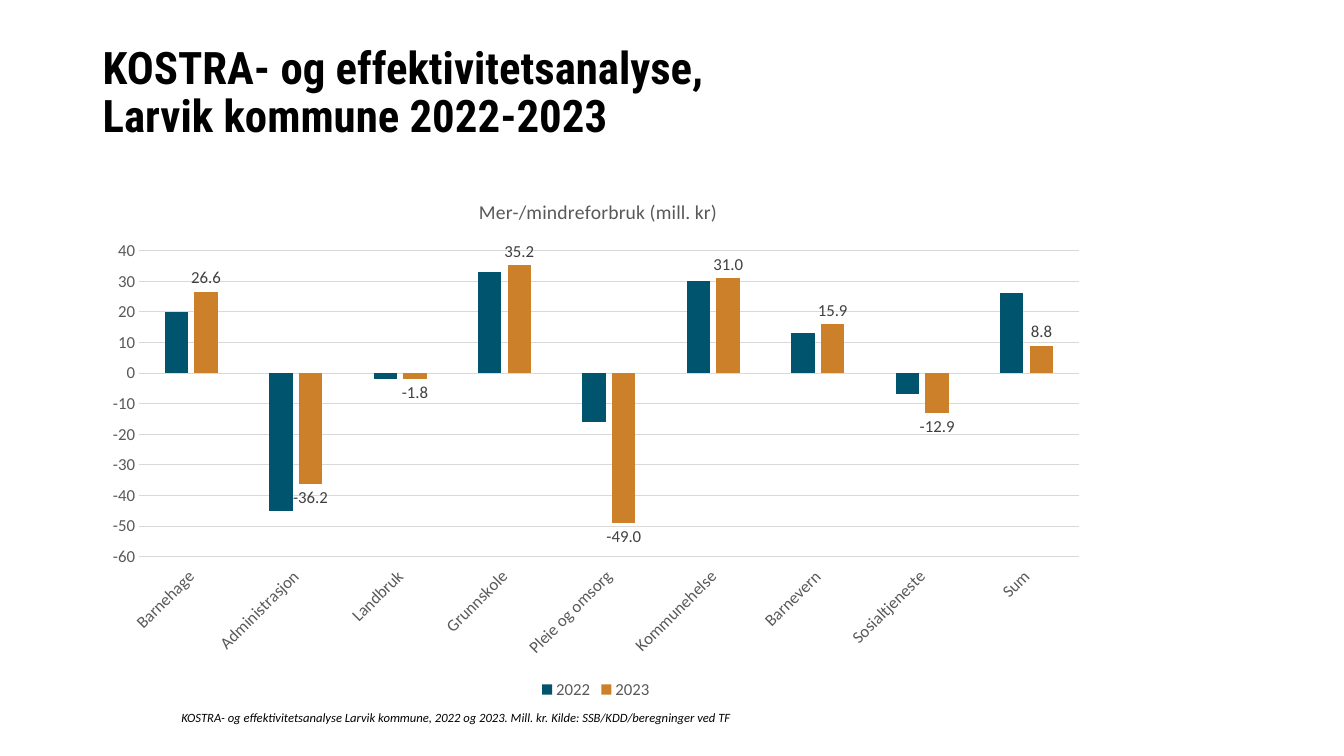
"""Build the KOSTRA efficiency analysis slide with its clustered column chart."""
from pptx import Presentation
from pptx.chart.data import CategoryChartData
from pptx.dml.color import RGBColor as RGB
from pptx.enum.chart import XL_CHART_TYPE as CT, XL_LABEL_POSITION as LP
from pptx.enum.chart import XL_LEGEND_POSITION as LEG, XL_TICK_LABEL_POSITION as TLP
from pptx.enum.chart import XL_TICK_MARK as TM
from pptx.enum.text import MSO_ANCHOR as ANC
from pptx.util import Inches, Pt

THEME = {
    "heading": {"name": "Roboto Condensed", "size": Pt(32), "bold": True, "color": "000000"},
    "source": {"name": "Calibri", "size": Pt(9), "italic": True, "color": "000000"},
    "chart_title": {"name": "Calibri", "size": Pt(14), "bold": False, "color": "595959"},
    "axis": {"name": "Calibri", "size": Pt(12), "color": "595959"},
    "label": {"name": "Calibri", "size": Pt(12), "color": "404040"},
    "grid": "D9D9D9",
    "series": ["00546D", "CC8029"],
}
CATEGORIES = ["Barnehage", "Administrasjon", "Landbruk", "Grunnskole", "Pleie og omsorg",
              "Kommunehelse", "Barnevern", "Sosialtjeneste", "Sum"]
SPENDING = {
    "2022": [20, -45, -2, 33, -16, 30, 13, -7, 26],
    "2023": [26.6, -36.2, -1.8, 35.2, -49, 31, 15.9, -12.9, 8.8],
}


def style(font, role):
    for key, value in THEME[role].items():
        if key == "color":
            font.color.rgb = RGB.from_string(value)
        else:
            setattr(font, key, value)


def rule(line):
    line.color.rgb = RGB.from_string(THEME["grid"])
    line.width = Pt(0.75)


prs = Presentation()
prs.slide_width, prs.slide_height = Inches(13.33), Inches(7.5)
s = prs.slides.add_slide(prs.slide_layouts[6])
LEFT = Inches(0.92)

TEXTS = [
    ("heading", (LEFT, Inches(0.4), Inches(11.5), Inches(1.06)), ANC.BOTTOM,
     {"line_spacing": 0.9},
     "KOSTRA- og effektivitetsanalyse, \vLarvik kommune 2022-2023"),
    ("source", (Inches(1.7), Inches(6.99), Inches(7.94), Inches(0.25)), ANC.TOP,
     {"space_before": Pt(12), "space_after": Pt(12)},
     "KOSTRA- og effektivitetsanalyse Larvik kommune, 2022 og 2023. "
     "Mill. kr. Kilde: SSB/KDD/beregninger ved TF"),
]
for role, box, anchor, spacing, text in TEXTS:
    tf = s.shapes.add_textbox(*box).text_frame
    tf.word_wrap, tf.vertical_anchor = True, anchor
    p = tf.paragraphs[0]
    p.text = text
    for key, value in spacing.items():
        setattr(p, key, value)
    for r in p.runs:
        style(r.font, role)

data = CategoryChartData()
data.categories = CATEGORIES
for year, values in SPENDING.items():
    data.add_series(year, values)
chart = s.shapes.add_chart(CT.COLUMN_CLUSTERED, LEFT, Inches(1.77),
                           Inches(9.98), Inches(5.21), data).chart
style(chart.font, "axis")

chart.has_title = True
p = chart.chart_title.text_frame.paragraphs[0]
p.text = " Mer-/mindreforbruk (mill. kr)"
style(p.runs[0].font, "chart_title")
chart.chart_title.include_in_layout = False

chart.has_legend = True
chart.legend.position = LEG.BOTTOM
chart.legend.include_in_layout = False
style(chart.legend.font, "axis")

cat, val = chart.category_axis, chart.value_axis
for axis in (cat, val):
    axis.major_tick_mark = axis.minor_tick_mark = TM.NONE
    style(axis.tick_labels.font, "axis")
cat.tick_label_position = TLP.LOW
cat.tick_labels.font._element.getparent().getparent().getparent().find(
    "{*}bodyPr").set("rot", "-2700000")
rule(cat.format.line)
val.minimum_scale, val.maximum_scale, val.major_unit = -60, 40, 10
val.tick_labels.number_format = "0"
val.tick_labels.number_format_is_linked = False
val.format.line.fill.background()
val.has_major_gridlines = True
rule(val.major_gridlines.format.line)

plot = chart.plots[0]
plot.gap_width, plot.overlap, plot.vary_by_categories = 219, -27, False
for series, color in zip(plot.series, THEME["series"]):
    series.invert_if_negative = False
    series.format.fill.solid()
    series.format.fill.fore_color.rgb = RGB.from_string(color)

labels = plot.series[1].data_labels
labels.show_value = True
labels.number_format, labels.number_format_is_linked = "0.0", False
labels.position = LP.OUTSIDE_END
style(labels.font, "label")

prs.save("out.pptx")
